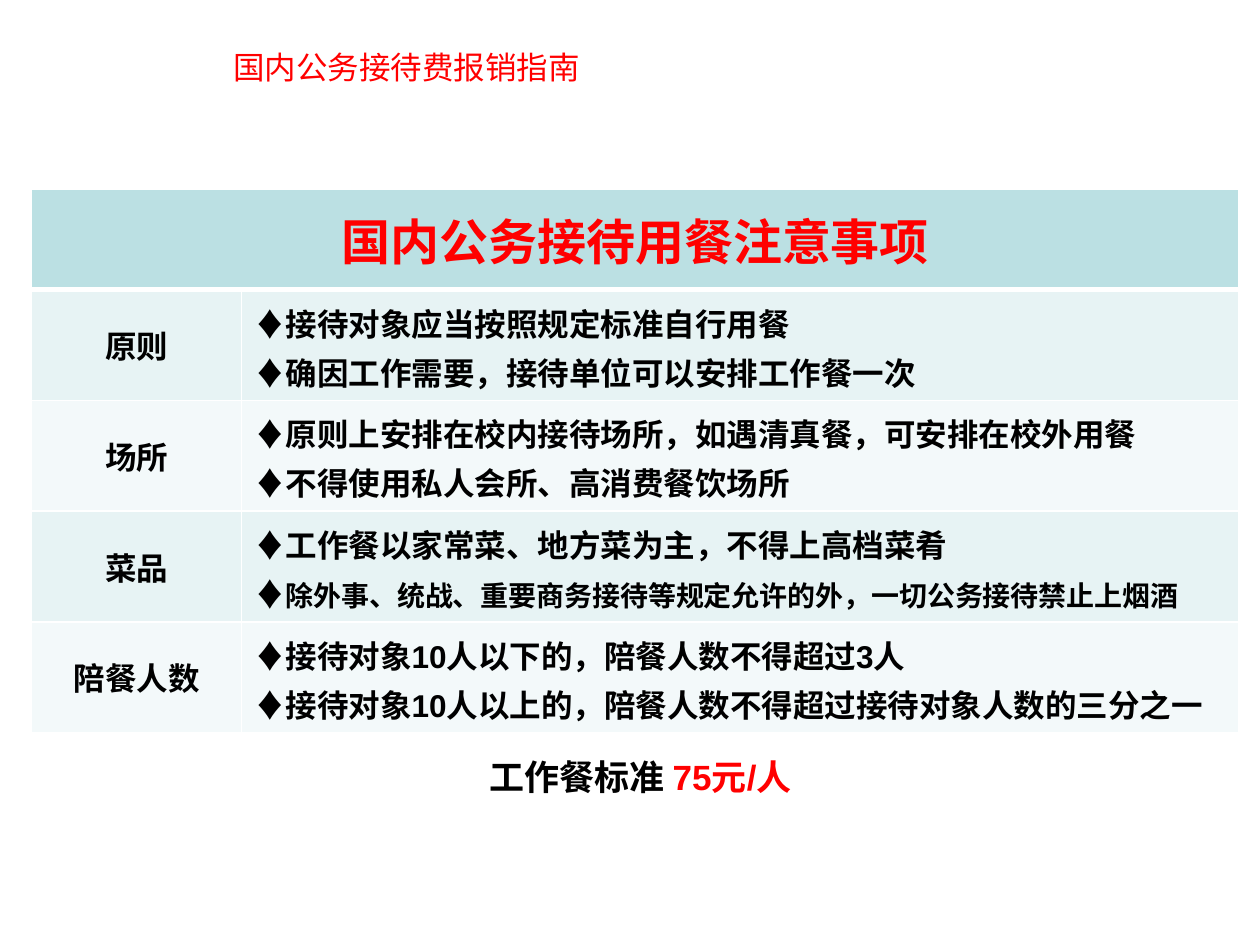
from lxml.etree import SubElement
from pptx import Presentation
from pptx.dml.color import RGBColor
from pptx.enum.text import MSO_ANCHOR as ANCHOR, PP_ALIGN as ALIGN
from pptx.oxml import parse_xml
from pptx.oxml.ns import nsdecls, qn
from pptx.util import Inches, Pt

COLORS = {"red": "FF0000", "black": "000000", "white": "FFFFFF",
          "head": "BBE0E3", "odd": "E7F3F4", "even": "F3F9FA"}
LATIN, CJK = "Arial", "Noto Sans CJK SC"
COLS, ROWS = 120, 90

NOTES = [
    ("原则", [[("♦接待对象应当按照规定标准自行用餐", 18)],
            [("♦确因工作需要，接待单位可以安排工作餐一次", 18)]]),
    ("场所", [[("♦原则上安排在校内接待场所，如遇清真餐，可安排在校外用餐", 18)],
            [("♦不得使用私人会所、高消费餐饮场所", 18)]]),
    ("菜品", [[("♦工作餐以家常菜、地方菜为主，不得上高档菜肴", 18)],
            [("♦", 18), ("除外事、统战、重要商务接待等规定允许的外，一切公务接待禁止上烟酒", 16)]]),
    ("陪餐人数", [[("♦接待对象10人以下的，陪餐人数不得超过3人", 18)],
              [("♦接待对象10人以上的，陪餐人数不得超过接待对象人数的三分之一", 18)]]),
]


class Deck:
    """Holds the slide, its grid and the text and table style."""

    def __init__(self):
        self.prs = Presentation()
        self.prs.slide_width, self.prs.slide_height = Inches(10), Inches(7.5)
        self.s = self.prs.slides.add_slide(self.prs.slide_layouts[5])

    def x(self, cols):
        return round(self.prs.slide_width * cols / COLS)

    def y(self, rows):
        return round(self.prs.slide_height * rows / ROWS)

    def box(self, left, top, width, height):
        return self.x(left), self.y(top), self.x(width), self.y(height)

    def run(self, p, text, size, color="black", bold=True, font=LATIN):
        r = p.add_run()
        r.text = text
        r.font.size, r.font.bold = Pt(size), bold
        r.font.color.rgb = RGBColor.from_string(COLORS[color])
        r.font.name = font
        SubElement(r._r.get_or_add_rPr(), qn("a:ea")).set("typeface", CJK)

    def title(self, text, *area):
        sp = self.s.shapes.title
        sp.left, sp.top, sp.width, sp.height = self.box(*area)
        tf = sp.text_frame
        tf.vertical_anchor = ANCHOR.TOP
        p = tf.paragraphs[0]
        p.alignment = ALIGN.LEFT
        self.run(p, text, 18, "red", False, CJK)

    def caption(self, parts, *area):
        tf = self.s.shapes.add_textbox(*self.box(*area)).text_frame
        tf.word_wrap, tf.vertical_anchor = True, ANCHOR.BOTTOM
        tf.margin_bottom = 0
        p = tf.paragraphs[0]
        p.alignment, p.line_spacing = ALIGN.CENTER, Pt(33)
        for text, color in parts:
            self.run(p, text, 20, color)

    def style_cell(self, cell, fill, top=1, bottom=1):
        cell.fill.solid()
        cell.fill.fore_color.rgb = RGBColor.from_string(COLORS[fill])
        tcPr = cell._tc.get_or_add_tcPr()
        for i, (side, width) in enumerate(zip("LRTB", (1, 1, top, bottom))):
            tcPr.insert(i, parse_xml(
                f'<a:ln{side} {nsdecls("a")} w="{Pt(width)}"><a:solidFill>'
                f'<a:srgbClr val="{COLORS["white"]}"/></a:solidFill></a:ln{side}>'))

    def label(self, cell, text, size=18, color="black", font=LATIN):
        cell.vertical_anchor = ANCHOR.MIDDLE
        p = cell.text_frame.paragraphs[0]
        p.alignment = ALIGN.CENTER
        self.run(p, text, size, color, font=font)

    def points(self, cell, lines):
        tf = cell.text_frame
        for i, line in enumerate(lines):
            p = tf.add_paragraph() if i else tf.paragraphs[0]
            p.line_spacing = Pt(28)
            for text, size in line:
                self.run(p, text, size)

    def table(self, heading, notes, left, top, widths, head_h, row_h):
        area = self.box(left, top, sum(widths), head_h + row_h * len(notes))
        tbl = self.s.shapes.add_table(len(notes) + 1, len(widths), *area).table
        tbl.horz_banding = False
        for col, width in zip(tbl.columns, widths):
            col.width = self.x(width)
        for i, row in enumerate(tbl.rows):
            row.height = self.y(row_h if i else head_h)
            fill = "head" if i == 0 else "odd" if i % 2 else "even"
            for cell in row.cells:
                self.style_cell(cell, fill, 3 if i == 1 else 1, 1 if i else 3)
        tbl.cell(0, 0).merge(tbl.cell(0, len(widths) - 1))
        self.label(tbl.cell(0, 0), heading, 28, "red", CJK)
        for i, (name, lines) in enumerate(notes, 1):
            self.label(tbl.cell(i, 0), name)
            self.points(tbl.cell(i, 1), lines)


def main():
    deck = Deck()
    deck.caption([("工作餐标准 ", "black"), ("75元/人", "red")], 4, 15, 114, 61)
    deck.title("国内公务接待费报销指南", 21, 4, 66, 6.6)
    deck.table("国内公务接待用餐注意事项", NOTES, 3, 18, (20, 95), 9.6, 10.53)
    deck.prs.save("out.pptx")


if __name__ == "__main__":
    main()
